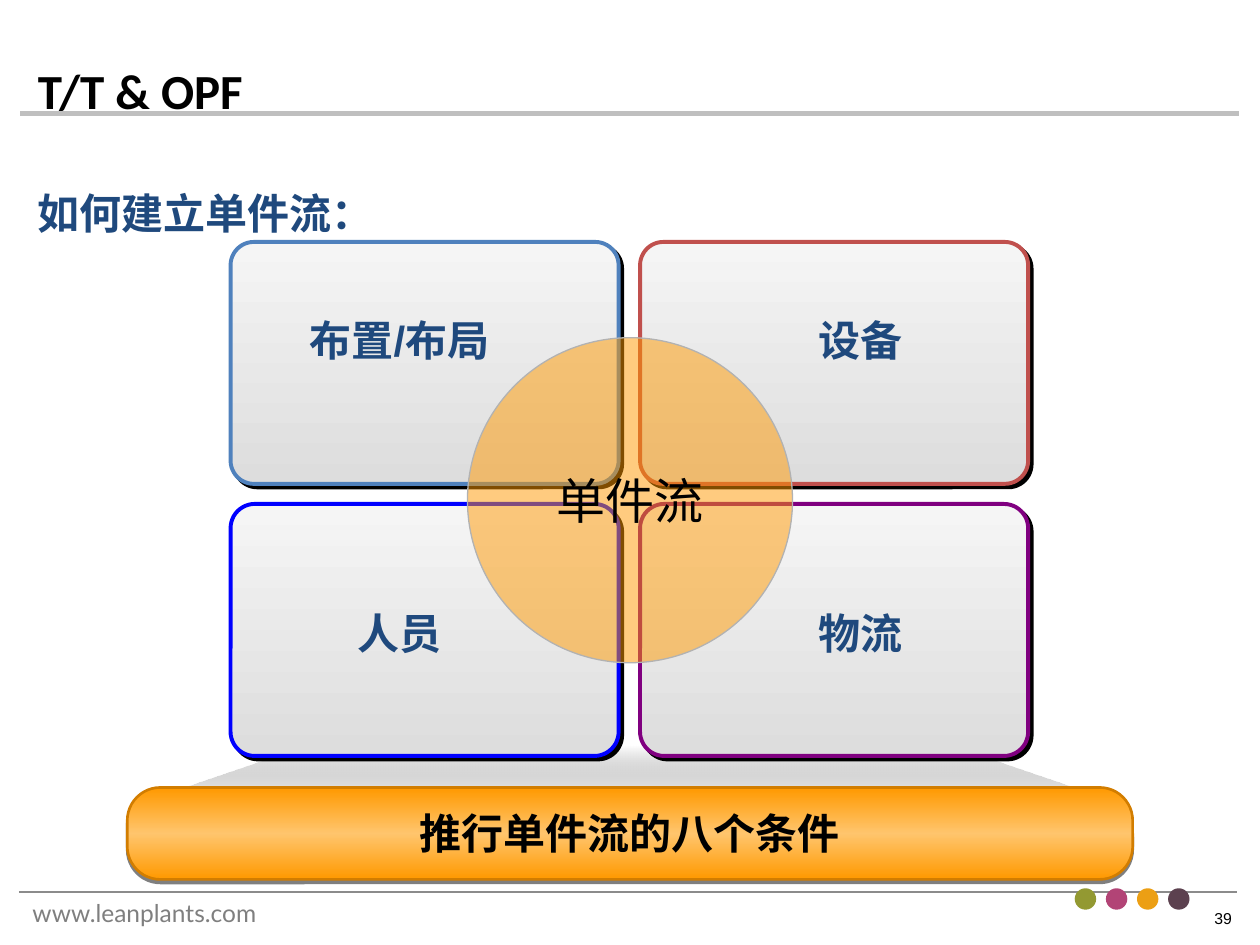
from lxml.etree import SubElement
from pptx import Presentation
from pptx.dml.color import RGBColor
from pptx.enum.shapes import MSO_CONNECTOR, MSO_SHAPE
from pptx.enum.text import MSO_ANCHOR, PP_ALIGN
from pptx.oxml.ns import qn
from pptx.util import Inches, Pt

COLORS = {
    "black": "000000", "navy": "1F497D", "footer": "7F7F7F",
    "rule": "BFBFBF", "footer_rule": "8B8B8B", "white": "FFFFFF",
    "shade": "5F5F5F", "card_top": "F5F5F5", "card_bottom": "DDDDDD",
    "blue": "4F81BD", "red": "C0504D", "bright_blue": "0000FF", "purple": "800080",
    "orange": "FF9900", "light_orange": "FFC56D", "dark_orange": "D27D00",
    "ring": "B2B2B2", "dot1": "939932", "dot2": "B24476", "dot3": "EC9F14", "dot4": "5C414F",
}


def write(s, text, size, color, font="Arial", bold=False, align=PP_ALIGN.LEFT,
          anchor=MSO_ANCHOR.TOP, wrap=True):
    tf = s.text_frame
    tf.word_wrap = wrap
    tf.vertical_anchor = anchor
    p = tf.paragraphs[0]
    p.text = text
    p.alignment = align
    p.font.name = font
    p.font.size = Pt(size)
    p.font.bold = bold
    p.font.color.rgb = RGBColor.from_string(COLORS[color])


def style(s, stops, line=None, width=0, shadow=None):
    s.shadow.inherit = False
    s.fill.gradient()
    grad = s._element.spPr.find(qn("a:gradFill"))
    for child in list(grad):
        grad.remove(child)
    gs_list = SubElement(grad, qn("a:gsLst"))
    for pos, color, alpha in stops:
        gs = SubElement(gs_list, qn("a:gs"), pos=str(pos * 1000))
        clr = SubElement(gs, qn("a:srgbClr"), val=COLORS[color])
        if alpha < 100:
            SubElement(clr, qn("a:alpha"), val=str(alpha * 1000))
    SubElement(grad, qn("a:lin"), ang="5400000", scaled="0")
    if line:
        s.line.color.rgb = RGBColor.from_string(COLORS[line])
        s.line.width = Pt(width)
    else:
        s.line.fill.background()
    if shadow:
        alpha, dist, angle = shadow
        effects = s._element.spPr.find(qn("a:effectLst"))
        outer = SubElement(effects, qn("a:outerShdw"), dist=str(Pt(dist)),
                           dir=str(angle * 60000), algn="ctr", rotWithShape="0")
        clr = SubElement(outer, qn("a:srgbClr"), val=COLORS["black"])
        SubElement(clr, qn("a:alpha"), val=str(alpha * 1000))


prs = Presentation()
prs.slide_width, prs.slide_height = Inches(10), Inches(7.5)
slide = prs.slides.add_slide(prs.slide_layouts[5])
shapes = slide.shapes

for x, y, color, width in [(0.15, 7.08, "footer_rule", 1), (0.16, 0.9, "rule", 3)]:
    s = shapes.add_connector(MSO_CONNECTOR.STRAIGHT, Inches(x), Inches(y),
                             Inches(x + 9.67), Inches(y))
    s.line.color.rgb = RGBColor.from_string(COLORS[color])
    s.line.width = Pt(width)
    SubElement(s._element.spPr, qn("a:effectLst"))

s = shapes.add_textbox(Inches(0.16), Inches(7.08), Inches(2.34), Inches(0.34))
write(s, "www.leanplants.com", 14, "footer", font="Lato")
s = shapes.add_textbox(Inches(9.54), Inches(7.16), Inches(0.37), Inches(0.27))
write(s, "39", 9, "black", wrap=False)

title = shapes.title
title.left, title.top = Inches(0.2), Inches(0.44)
title.width, title.height = Inches(8.43), Inches(0.55)
write(title, "T/T & OPF", 28, "black", font="Calibri", bold=True, anchor=MSO_ANCHOR.MIDDLE)

for i in range(4):
    s = shapes.add_shape(MSO_SHAPE.OVAL, Inches(8.53 + 0.247 * i), Inches(7.05),
                         Inches(0.17), Inches(0.17))
    s.shadow.inherit = False
    s.fill.solid()
    s.fill.fore_color.rgb = RGBColor.from_string(COLORS[f"dot{i + 1}"])
    s.line.fill.background()

s = shapes.add_textbox(Inches(0.2), Inches(1.44), Inches(5.91), Inches(0.5))
write(s, "如何建立单件流：", 24, "navy", bold=True)

builder = shapes.build_freeform(Inches(1.12), Inches(6.36))
builder.add_line_segments([(Inches(x), Inches(y)) for x, y in
                           [(2.44, 5.92), (7.55, 5.92), (8.87, 6.36)]])
style(builder.convert_to_shape(), [(0, "white", 100), (100, "shade", 0)])

cards = [
    ("布置/布局", 0, 0, "blue"), ("设备", 1, 0, "red"),
    ("人员", 0, 1, "bright_blue"), ("物流", 1, 1, "purple"),
]
for text, col, row, color in cards:
    s = shapes.add_shape(MSO_SHAPE.ROUNDED_RECTANGLE, Inches(1.83 + 3.25 * col),
                         Inches((1.92, 4)[row]), Inches(3.08), Inches((1.92, 2)[row]))
    s.adjustments[0] = 0.096
    style(s, [(0, "card_top", 100), (100, "card_bottom", 100)], color, 2.25, (100, 2.8, 45))

s = shapes.add_shape(MSO_SHAPE.ROUNDED_RECTANGLE, Inches(1.01), Inches(6.25),
                     Inches(7.98), Inches(0.73))
s.adjustments[0] = 0.36
style(s, [(0, "orange", 100), (50, "light_orange", 100), (100, "orange", 100)],
      "dark_orange", 1.5, (50, 2, 90))

for text, col, row, color in cards:
    s = shapes.add_textbox(Inches(1.92 + 3.66 * col), Inches(2.45 + 2.32 * row),
                           Inches(2.5), Inches(0.5))
    write(s, text, 24, "navy", bold=True, align=PP_ALIGN.CENTER)

s = shapes.add_textbox(Inches(1.83), Inches(6.36), Inches(6.33), Inches(0.5))
write(s, "推行单件流的八个条件", 24, "black", bold=True, align=PP_ALIGN.CENTER)

s = shapes.add_shape(MSO_SHAPE.OVAL, Inches(3.71), Inches(2.68), Inches(2.58), Inches(2.58))
s.shadow.inherit = False
s.fill.solid()
s.fill.fore_color.rgb = RGBColor.from_string(COLORS["orange"])
clr = s._element.spPr.find(qn("a:solidFill")).find(qn("a:srgbClr"))
SubElement(clr, qn("a:alpha"), val="50000")
s.line.color.rgb = RGBColor.from_string(COLORS["ring"])
s.line.width = Pt(0.75)
write(s, "单件流", 28, "black", align=PP_ALIGN.CENTER, anchor=MSO_ANCHOR.MIDDLE, wrap=False)

prs.save("out.pptx")
